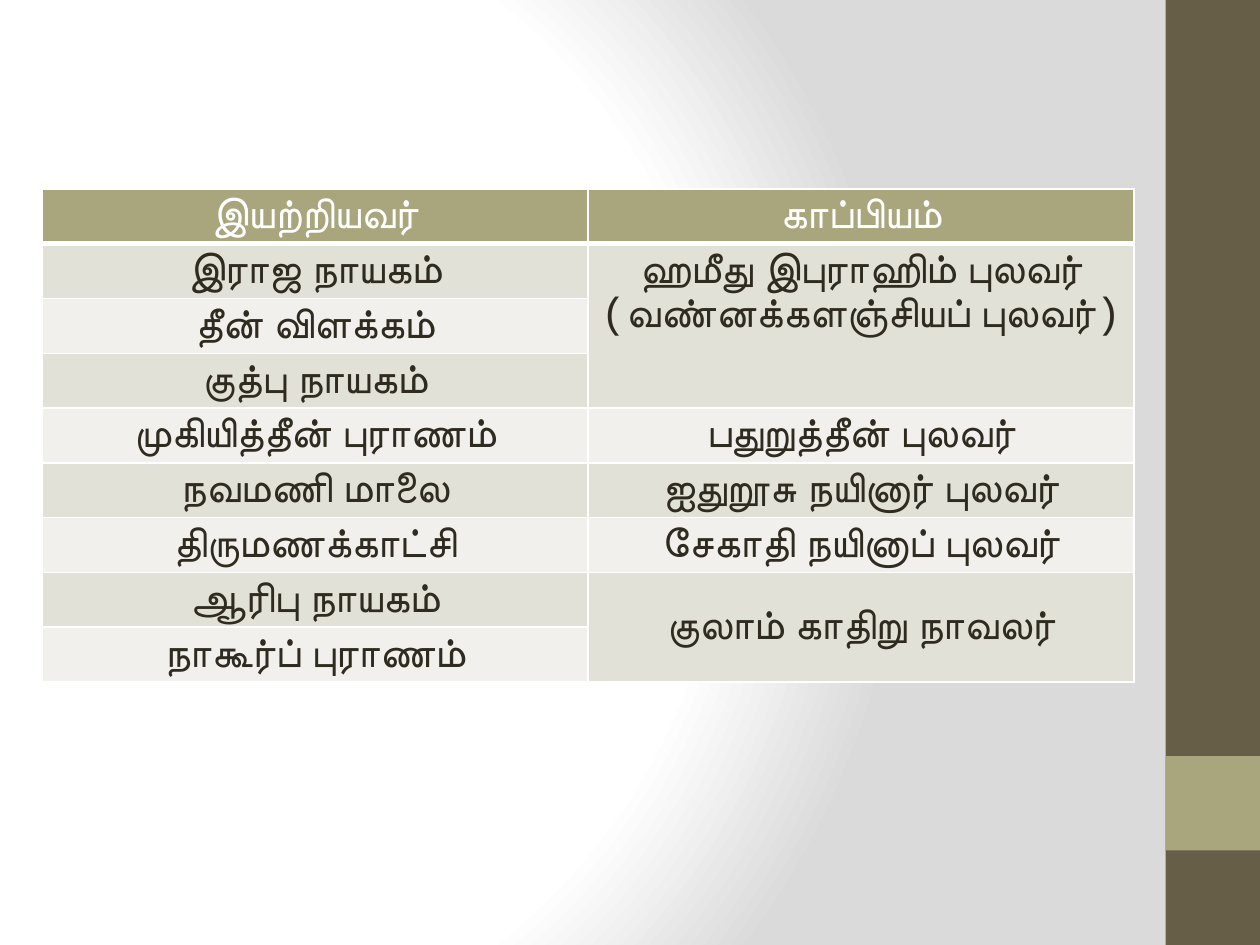
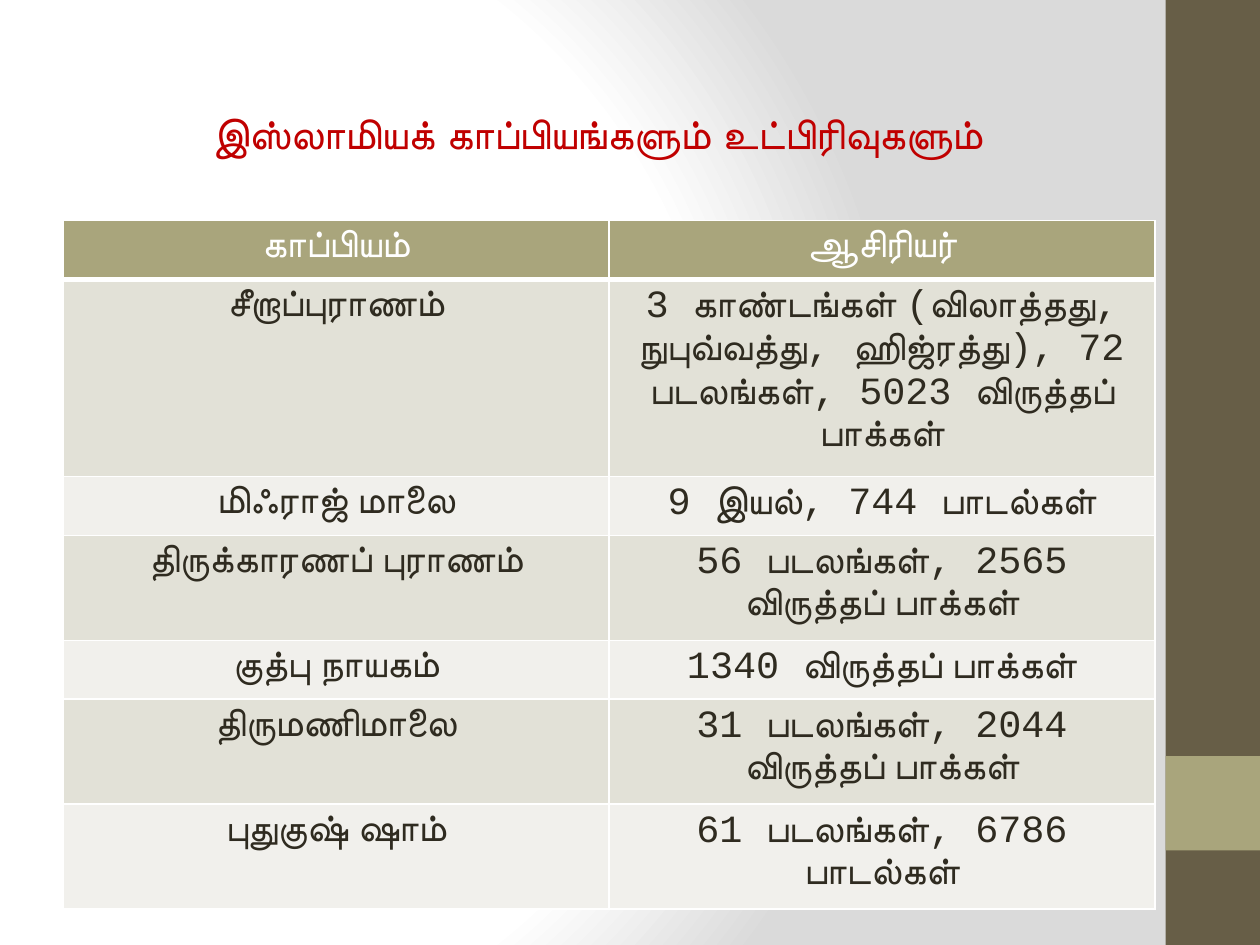
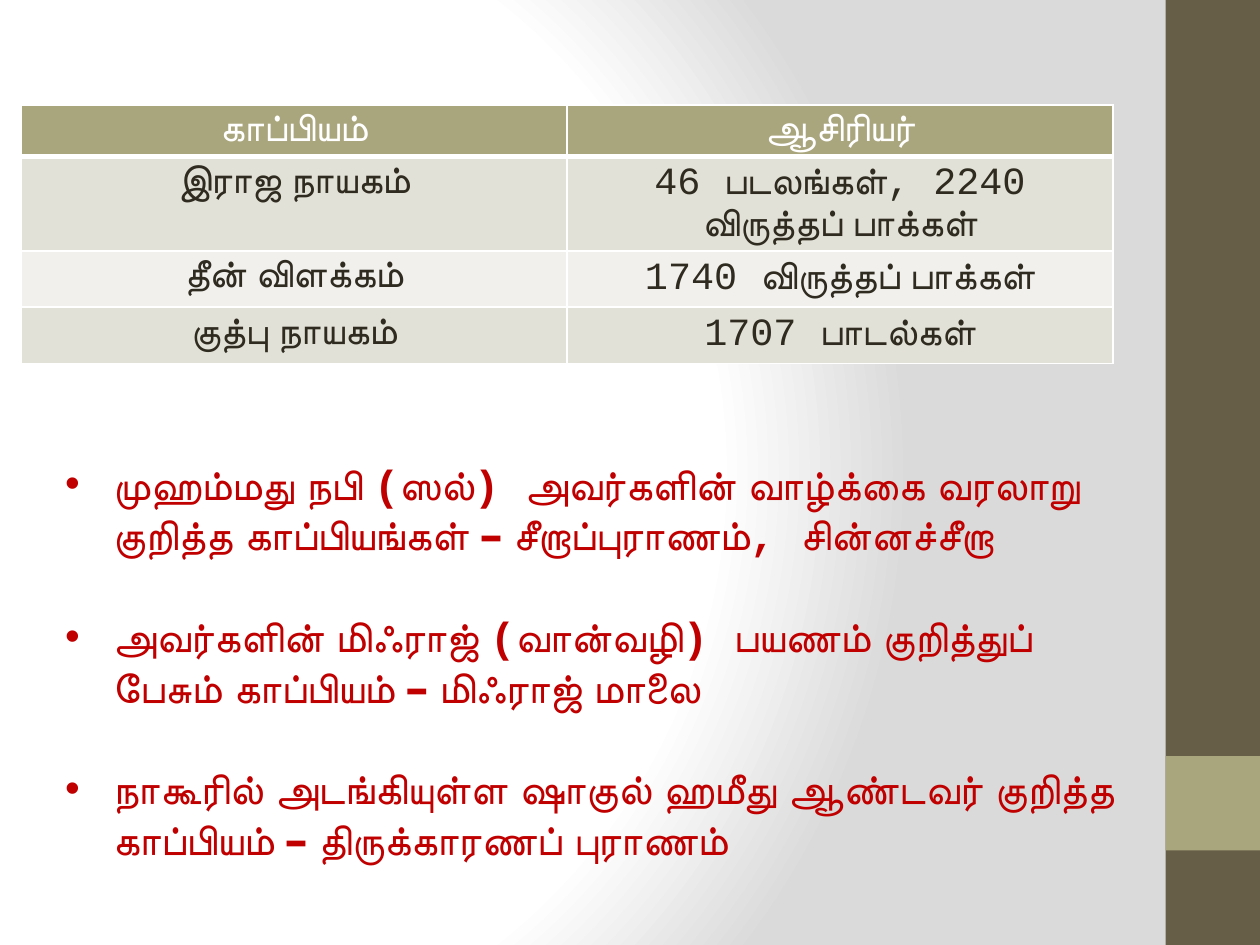
from dataclasses import dataclass

from pptx import Presentation
from pptx import oxml, util as u
from pptx.dml.color import RGBColor
from pptx.enum import shapes, text
from pptx.oxml.ns import nsdecls, qn


@dataclass(frozen=True)
class Theme:
    font: str = "Courier New"
    big: int = 24
    mid: int = 22
    lead: int = 29
    white: str = "FFFFFF"
    edge: str = "DADADA"
    dark: str = "675E47"
    olive: str = "A9A57C"
    ink: str = "2F2B20"
    red: str = "C00000"
    odd: str = "E2E1D7"
    even: str = "F1F0EC"


class Deck:
    """Builds slides on a grid of 120 columns by 90 rows in one style."""

    def __init__(self, theme):
        self.theme = theme
        self.prs = Presentation()
        self.prs.slide_width, self.prs.slide_height = u.Inches(10), u.Inches(7.5)
        self.unit = self.prs.slide_width / 120
        self.slide = None
        self.master()

    def grid(self, *cells):
        return [round(c * self.unit) for c in cells]

    def master(self):
        t, master = self.theme, self.prs.slide_master
        stops = "".join(
            f'<a:gs pos="{pos * 1000}"><a:srgbClr val="{tone}"/></a:gs>'
            for pos, tone in ((0, t.white), (75, t.white), (100, t.edge)))
        fill = master.background.fill
        fill.solid()
        fill.fore_color.rgb = RGBColor.from_string(t.white)
        solid = master.element.find(".//" + qn("p:bgPr")).find(qn("a:solidFill"))
        solid.getparent().replace(solid, oxml.parse_xml(
            f'<a:gradFill {nsdecls("a")} rotWithShape="1"><a:gsLst>{stops}</a:gsLst>'
            '<a:path path="circle"><a:fillToRect l="20000" t="50000" r="100000" b="50000"/>'
            '</a:path></a:gradFill>'))
        self.add(6)
        for tone, top, high in ((t.dark, 0, 90), (t.olive, 72, 9)):
            band = self.rect(tone, 111, top, 9, high)
            master.shapes._spTree.append(band._element)

    def add(self, layout):
        """Starts a slide; the blank one that held the bands is used first."""
        slides = self.prs.slides
        if len(slides) == 1 and self.slide and not len(self.slide.shapes) and layout == 6:
            return
        self.slide = slides.add_slide(self.prs.slide_layouts[layout])

    def rect(self, tone, *box):
        shape = self.slide.shapes.add_shape(shapes.MSO_SHAPE.RECTANGLE, *self.grid(*box))
        shape.shadow.inherit = False
        shape.fill.solid()
        shape.fill.fore_color.rgb = RGBColor.from_string(tone)
        shape.line.fill.background()
        return shape

    def style(self, para, tone, size, bold, **form):
        for name, val in form.items():
            setattr(para, name, val)
        for run in para.runs:
            for name, val in dict(name=self.theme.font, size=u.Pt(size), bold=bold).items():
                setattr(run.font, name, val)
            run.font.color.rgb = RGBColor.from_string(tone)

    def place(self, shape, words, box, gap=0):
        for name, val in zip(("left", "top", "width", "height"), self.grid(*box)):
            setattr(shape, name, val)
        frame = shape.text_frame
        frame.text = words
        form = dict(word_wrap=True, auto_size=text.MSO_AUTO_SIZE.NONE,
                    vertical_anchor=text.MSO_ANCHOR.TOP)
        for name, val in form.items():
            setattr(frame, name, val)
        t = self.theme
        for para in frame.paragraphs:
            self.style(para, t.red, t.big, True, alignment=text.PP_ALIGN.LEFT,
                       line_spacing=u.Pt(t.lead), space_before=u.Pt(0), space_after=u.Pt(gap))
        return frame

    def title(self, words, *box):
        self.place(self.slide.shapes.title, words, box)

    def bullets(self, items, *box):
        title = self.slide.shapes.title._element
        title.getparent().remove(title)
        frame = self.place(self.slide.placeholders[1], "\n".join(items), box, self.theme.lead)
        hang = u.Inches(0.38)
        for para in frame.paragraphs:
            prop = para._p.get_or_add_pPr()
            prop.set("marL", str(hang))
            prop.set("indent", str(-hang))

    def border(self, cell, head):
        prop = cell._tc.get_or_add_tcPr()
        for at, side in enumerate("LRTB"):
            wide = u.Pt(3 if head and side == "B" else 1)
            prop.insert(at, oxml.parse_xml(
                f'<a:ln{side} {nsdecls("a")} w="{wide}"><a:solidFill>'
                f'<a:srgbClr val="{self.theme.white}"/></a:solidFill></a:ln{side}>'))

    def table(self, rows, highs, left, top, size, wide=104):
        t, cols = self.theme, len(rows[0])
        grid = self.slide.shapes.add_table(
            len(rows), cols, *self.grid(left, top, wide, sum(highs))).table
        for row, high in zip(grid.rows, self.grid(*highs)):
            row.height = high
        for r, row in enumerate(rows):
            head = r == 0
            for c, words in enumerate(row):
                cell = grid.cell(r, c)
                cell.fill.solid()
                tone = t.olive if head else (t.even, t.odd)[r % 2]
                cell.fill.fore_color.rgb = RGBColor.from_string(tone)
                self.border(cell, head)
                cell.text = words or ""
                for para in cell.text_frame.paragraphs:
                    self.style(para, t.white if head else t.ink, size, head,
                               alignment=text.PP_ALIGN.CENTER)
        return grid


def poets(deck):
    deck.add(6)
    rows = [
        ("இயற்றியவர்", "காப்பியம்"),
        ("இராஜ நாயகம்", "ஹமீது இபுராஹிம் புலவர்\n(வண்னக்களஞ்சியப் புலவர்)"),
        ("தீன் விளக்கம்", None),
        ("குத்பு நாயகம்", None),
        ("முகியித்தீன் புராணம்", "பதுறுத்தீன் புலவர்"),
        ("நவமணி மாலை", "ஐதுறூசு நயினார் புலவர்"),
        ("திருமணக்காட்சி", "சேகாதி நயினாப் புலவர்"),
        ("ஆரிபு நாயகம்", "குலாம் காதிறு நாவலர்"),
        ("நாகூர்ப் புராணம்", None),
    ]
    grid = deck.table(rows, [5.22] * len(rows), 4, 18, deck.theme.big)
    for first, last in ((1, 3), (7, 8)):
        grid.cell(first, 1).merge(grid.cell(last, 1))
    grid.cell(7, 1).vertical_anchor = text.MSO_ANCHOR.MIDDLE


def parts(deck):
    deck.add(5)
    deck.title("இஸ்லாமியக் காப்பியங்களும் உட்பிரிவுகளும்", 19, 9.6, 83.6, 6)
    deck.table([
        ("காப்பியம்", "ஆசிரியர்"),
        ("சீறாப்புராணம்", "3 காண்டங்கள் (விலாத்தது, நுபுவ்வத்து, ஹிஜ்ரத்து), "
                         "72 படலங்கள், 5023 விருத்தப் பாக்கள்"),
        ("மிஃராஜ் மாலை", "9 இயல், 744 பாடல்கள்"),
        ("திருக்காரணப் புராணம்", "56 படலங்கள், 2565 விருத்தப் பாக்கள்"),
        ("குத்பு நாயகம்", "1340 விருத்தப் பாக்கள்"),
        ("திருமணிமாலை", "31 படலங்கள், 2044 விருத்தப் பாக்கள்"),
        ("புதுகுஷ் ஷாம்", "61 படலங்கள், 6786 பாடல்கள்"),
    ], [5.6, 18.8, 5.6, 10, 5.6, 10, 10], 6, 21, deck.theme.mid)


def themes(deck):
    deck.add(1)
    deck.table([
        ("காப்பியம்", "ஆசிரியர்"),
        ("இராஜ நாயகம்", "46 படலங்கள், 2240 விருத்தப் பாக்கள்"),
        ("தீன் விளக்கம்", "1740 விருத்தப் பாக்கள்"),
        ("குத்பு நாயகம்", "1707 பாடல்கள்"),
    ], [4.9, 8.9, 5.35, 5.35], 2, 10, deck.theme.mid)
    deck.bullets([
        "முஹம்மது நபி (ஸல்) அவர்களின் வாழ்க்கை வரலாறு குறித்த காப்பியங்கள் – "
        "சீறாப்புராணம், சின்னச்சீறா",
        "அவர்களின் மிஃராஜ் (வான்வழி) பயணம் குறித்துப் பேசும் காப்பியம் – மிஃராஜ் மாலை",
        "நாகூரில் அடங்கியுள்ள ஷாகுல் ஹமீது ஆண்டவர் குறித்த காப்பியம் – "
        "திருக்காரணப் புராணம்",
    ], 5, 43, 104, 40)


def main():
    deck = Deck(Theme())
    for build in (poets, parts, themes):
        build(deck)
    deck.prs.save("out.pptx")


if __name__ == "__main__":
    main()
